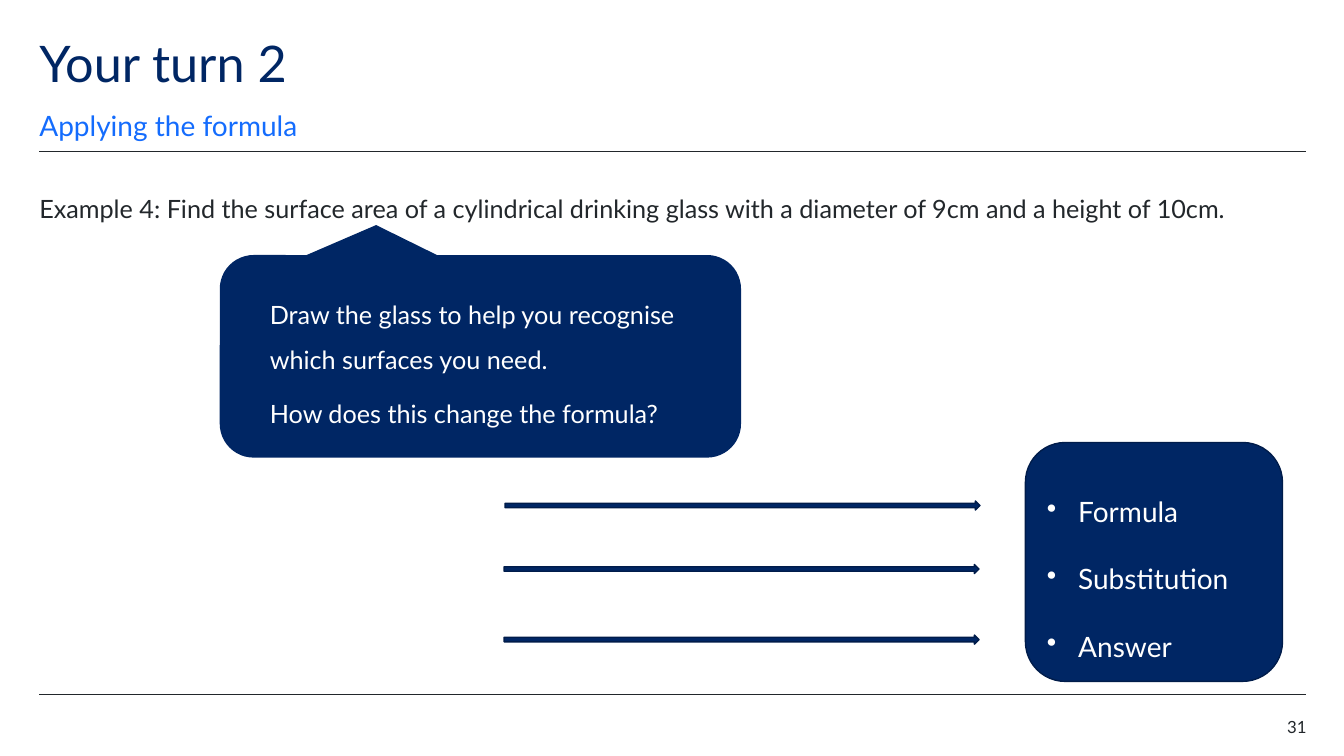
import pptx
import pptx.util
import pptx.dml.color
import pptx.enum.shapes
import pptx.enum.text
from dataclasses import dataclass
from lxml import etree

Inches = pptx.util.Inches
Pt = pptx.util.Pt
Kind = pptx.enum.shapes.MSO_SHAPE
Anchor = pptx.enum.text.MSO_ANCHOR
Align = pptx.enum.text.PP_ALIGN


@dataclass
class Theme:
    font: str = "Lato"
    navy: str = "002664"
    edge: str = "001C4A"
    blue: str = "146CFD"
    ink: str = "22272B"
    white: str = "FFFFFF"
    title: int = 36
    large: int = 20
    body: int = 18
    small: int = 12


theme = Theme()


def rgb(code):
    return pptx.dml.color.RGBColor.from_string(code)


def write(shape, lines, size, color, space=1.5, after=0, anchor=Anchor.TOP,
          align=Align.LEFT, inset=0.0, left=0.0, bullet=False):
    """Fill a shape with one paragraph per line; a bullet hangs in the left indent."""
    frame = shape.text_frame
    frame.word_wrap = True
    frame.auto_size = pptx.enum.text.MSO_AUTO_SIZE.NONE
    frame.vertical_anchor = anchor
    frame.margin_left = frame.margin_right = Inches(inset)
    frame.margin_top = frame.margin_bottom = Inches(inset / 2)
    for i, line in enumerate(lines):
        para = frame.add_paragraph() if i else frame.paragraphs[0]
        para.alignment = align
        para.line_spacing = space
        para.space_before = Pt(0)
        para.space_after = Pt(after)
        props = para._p.get_or_add_pPr()
        props.set("marL", str(Inches(left)))
        props.set("indent", str(-Inches(left) if bullet else 0))
        if bullet:
            mark = etree.SubElement(props, pptx.oxml.ns.qn("a:buChar"))
            mark.set("char", "•")
        run = para.add_run()
        run.text = line
        run.font.name = theme.font
        run.font.size = Pt(size)
        run.font.color.rgb = rgb(color)


deck = pptx.Presentation()
deck.slide_width = Inches(13.33)
deck.slide_height = Inches(7.5)
slide = deck.slides.add_slide(deck.slide_layouts[5])
shapes = slide.shapes

# Rules above and below the content
for y in (1.5, 6.89):
    rule = shapes.add_connector(pptx.enum.shapes.MSO_CONNECTOR.STRAIGHT,
                                Inches(0.39), Inches(y), Inches(12.95), Inches(y))
    rule.line.color.rgb = rgb(theme.ink)
    rule.line.width = Pt(0.5)
    etree.SubElement(rule._element.spPr, pptx.oxml.ns.qn("a:effectLst"))

# Heading, question and page number
title = shapes.title
title.left, title.top = Inches(0.39), Inches(0.39)
title.width, title.height = Inches(11.02), Inches(0.6)
write(title, ["Your turn 2"], theme.title, theme.navy, space=0.9)

topic = shapes.add_textbox(Inches(0.39), Inches(1.07), Inches(11.02), Inches(0.34))
write(topic, ["Applying the formula"], theme.large, theme.blue, anchor=Anchor.BOTTOM)

task = shapes.add_textbox(Inches(0.39), Inches(1.77), Inches(12.56), Inches(4.96))
write(task, ["Example 4: Find the surface area of a cylindrical drinking glass "
             "with a diameter of 9cm and a height of 10cm."], theme.body, theme.ink)

page = shapes.add_textbox(Inches(12.17), Inches(7.13), Inches(0.79), Inches(0.2))
write(page, ["31"], theme.small, theme.ink, space=0.9, align=Align.RIGHT)

# Hint, arrows and the steps they lead to
hint = shapes.add_shape(Kind.ROUNDED_RECTANGULAR_CALLOUT,
                        Inches(2.18), Inches(2.53), Inches(5.17), Inches(2.01))
for i, value in enumerate((-0.2, -0.648, 0.167)):
    hint.adjustments[i] = value
write(hint, ["Draw the glass to help you recognise which surfaces you need.",
             "How does this change the formula?"], theme.body, theme.white,
      after=6, anchor=Anchor.MIDDLE, inset=0.1, left=0.3)

arrows = [shapes.add_shape(Kind.RIGHT_ARROW, Inches(x), Inches(y), Inches(4.71), Inches(0.09))
          for x, y in ((5.01, 4.97), (5, 5.6), (5, 6.3))]

steps = shapes.add_shape(Kind.ROUNDED_RECTANGLE,
                         Inches(10.17), Inches(4.39), Inches(2.55), Inches(2.37))
write(steps, ["Formula", "Substitution", "Answer"], theme.large, theme.white,
      space=2, anchor=Anchor.MIDDLE, inset=0.1, left=0.31, bullet=True)

for shape in (hint, *arrows, steps):
    shape.shadow.inherit = False
    shape.fill.solid()
    shape.fill.fore_color.rgb = rgb(theme.navy)
    if shape is hint:
        shape.line.fill.background()
    else:
        shape.line.color.rgb = rgb(theme.edge)
        shape.line.width = Pt(1)

deck.save("out.pptx")
